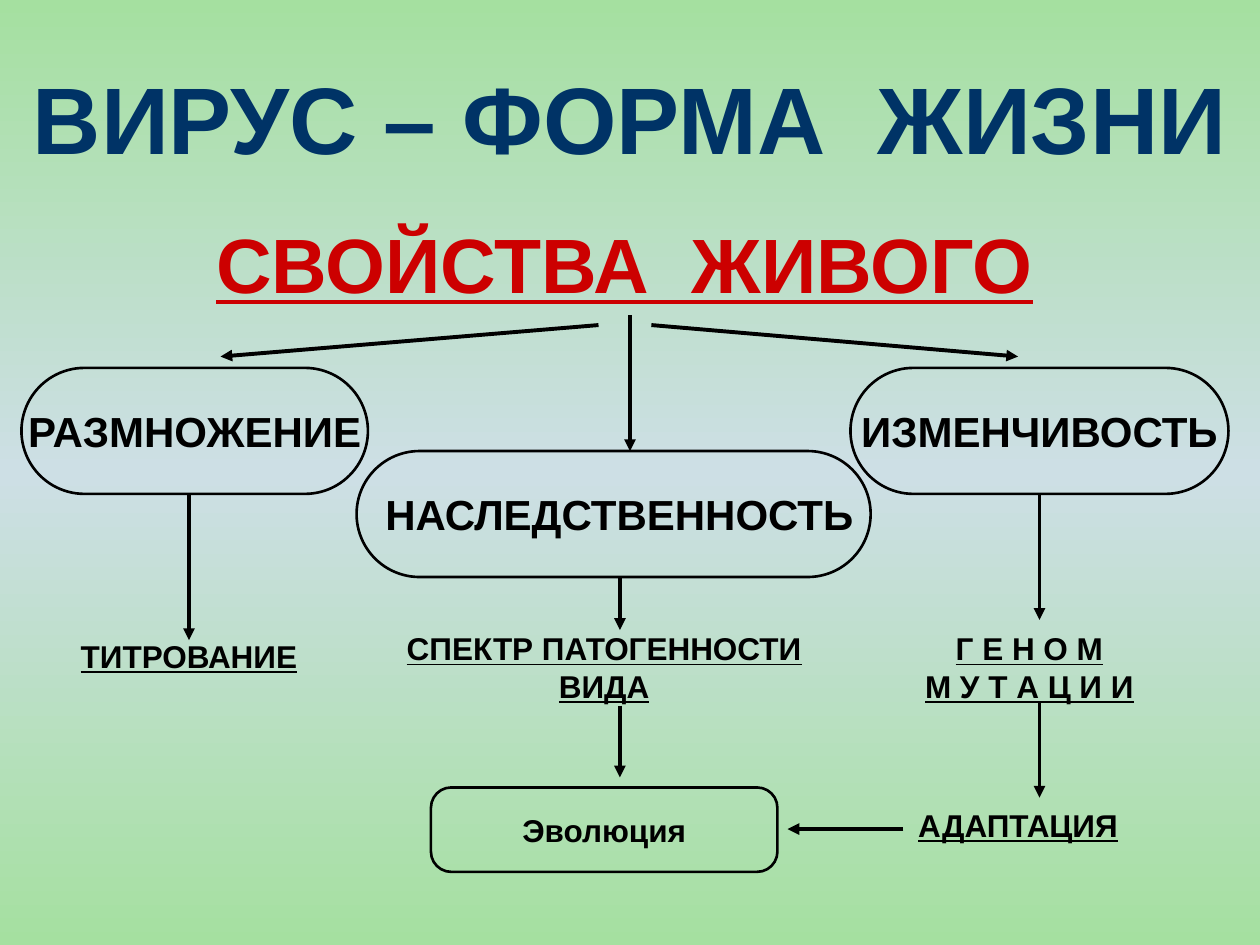
from copy import deepcopy

from pptx import Presentation
from pptx.dml.color import RGBColor
from pptx.enum.shapes import MSO_CONNECTOR as Conn, MSO_SHAPE as Shape
from pptx.enum.text import MSO_ANCHOR as Anchor, PP_ALIGN as Align
from pptx.oxml.ns import qn
from pptx.oxml.xmlchemy import OxmlElement
from pptx.util import Inches, Pt

BLACK, NAVY, RED = "000000", "003366", "CC0000"
GREEN, PALE_BLUE = "A5E0A0", "CDDFE5"


def rgb(value):
    return RGBColor.from_string(value)


def set_background(s):
    fill = s.background.fill
    fill.gradient()
    fill.gradient_angle = 90
    stop_list = s._element.find(".//" + qn("a:gsLst"))
    stop_list.append(deepcopy(stop_list[0]))
    for i, color in enumerate((GREEN, PALE_BLUE, GREEN)):
        stop = fill.gradient_stops[i]
        stop.position = i / 2
        stop.color.rgb = rgb(color)


def write(sp, lines, size, color=BLACK, underline=False, wrap=False):
    tf = sp.text_frame
    tf.word_wrap = wrap
    tf.vertical_anchor = Anchor.MIDDLE
    for i, line in enumerate(lines):
        p = tf.add_paragraph() if i else tf.paragraphs[0]
        p.alignment = Align.CENTER
        r = p.add_run()
        r.text = line
        r.font.name = "Arial"
        r.font.size = Pt(size)
        r.font.bold = True
        r.font.underline = underline
        r.font.color.rgb = rgb(color)


def add_title(s, box, text):
    sp = s.shapes.title
    sp.left, sp.top, sp.width, sp.height = map(Inches, box)
    write(sp, [text], 54, NAVY, wrap=True)


def add_label(s, box, lines, size=18, color=BLACK):
    sp = s.shapes.add_textbox(*map(Inches, box))
    sp.text_frame.margin_left = sp.text_frame.margin_right = 0
    write(sp, lines, size, color, underline=True)


def add_bubble(s, box, text, size=24, rounding=0.5):
    sp = s.shapes.add_shape(Shape.ROUNDED_RECTANGLE, *map(Inches, box))
    sp.adjustments[0] = rounding
    sp.shadow.inherit = False
    sp.fill.background()
    sp.line.color.rgb = rgb(BLACK)
    sp.line.width = Pt(1.5)
    write(sp, [text], size)
    return sp


def add_arrow(s, start, end):
    line = s.shapes.add_connector(Conn.STRAIGHT, *map(Inches, start + end))
    line.line.color.rgb = rgb(BLACK)
    line.line.width = Pt(2.25)
    head = OxmlElement("a:tailEnd")
    head.set("type", "triangle")
    line.line._get_or_add_ln().append(head)
    line._element.spPr.append(OxmlElement("a:effectLst"))
    return line


def add_properties(s, top):
    """Place the three properties of life and the arrows fanning out to them."""
    add_bubble(s, (0.17, top, 2.75, 1), "РАЗМНОЖЕНИЕ")
    add_bubble(s, (2.83, top + 0.66, 4.08, 1), " НАСЛЕДСТВЕННОСТЬ")
    variability = add_bubble(s, (6.75, top, 3, 1), "ИЗМЕНЧИВОСТЬ")
    add_arrow(s, (4.75, top - 0.34), (1.75, top - 0.09))
    add_arrow(s, (5.17, top - 0.34), (8.08, top - 0.09))
    add_arrow(s, (5, top - 0.42), (5, top + 0.66))
    return variability


def add_outcomes(s, top, variability):
    """Place what each property leads to, ending in evolution."""
    add_label(s, (0.5, top, 2, 0.75), ["ТИТРОВАНИЕ"])
    add_label(s, (7.17, top + 0.09, 2, 0.75), ["Г Е Н О М", "М У Т А Ц И И"])
    add_label(s, (3.17, top + 0.09, 3.25, 0.75), ["СПЕКТР ПАТОГЕННОСТИ", "ВИДА"])
    add_bubble(s, (3.42, top + 1.42, 2.75, 0.67), "Эволюция", 18, 0.24)
    add_label(s, (7.08, top + 1.34, 2, 0.75), ["АДАПТАЦИЯ"])

    add_arrow(s, (1.5, top - 0.91), (1.5, top + 0.25))
    add_arrow(s, (4.92, top - 0.25), (4.92, top + 0.17))
    add_arrow(s, (8.25, top - 0.91), (8.25, top + 0.09)).begin_connect(variability, 2)
    add_arrow(s, (4.92, top + 0.77), (4.92, top + 1.34))
    add_arrow(s, (8.25, top + 0.75), (8.25, top + 1.5))
    add_arrow(s, (7.17, top + 1.75), (6.25, top + 1.75))


def main():
    prs = Presentation()
    prs.slide_width, prs.slide_height = Inches(10), Inches(7.5)
    s = prs.slides.add_slide(prs.slide_layouts[5])
    set_background(s)
    add_title(s, (0, 0.3, 10, 1.25), "ВИРУС – ФОРМА  ЖИЗНИ")
    add_label(s, (1.66, 1.67, 6.6, 0.83), ["СВОЙСТВА  ЖИВОГО"], 44, RED)
    variability = add_properties(s, 2.92)
    add_outcomes(s, 4.83, variability)
    prs.save("out.pptx")


if __name__ == "__main__":
    main()
